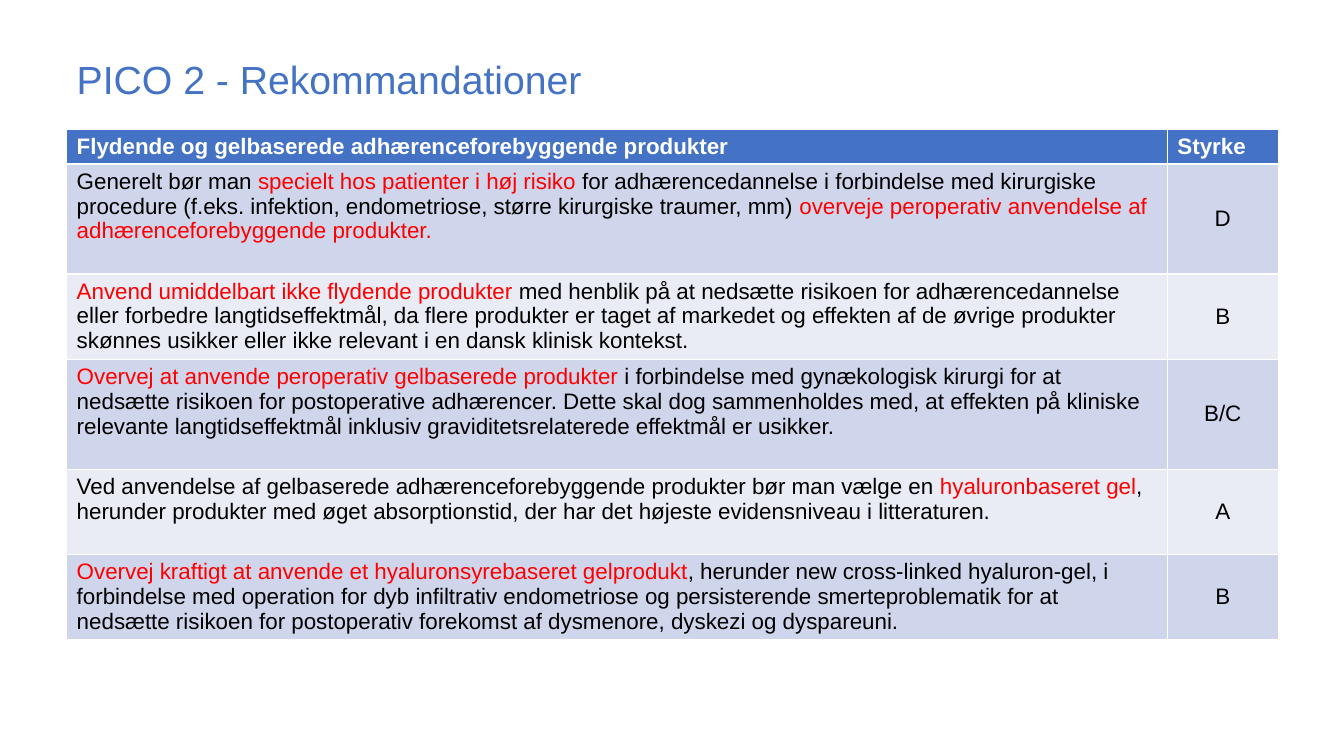
from pptx import Presentation
from pptx.dml.color import RGBColor as Rgb
from pptx.enum.text import MSO_ANCHOR as Anchor, MSO_AUTO_SIZE as Auto, PP_ALIGN as Align
from pptx.util import Cm, Pt

HUES = {"blue": "4472C4", "white": "FFFFFF", "black": "000000",
        "red": "FF0000", "dark": "CFD5EA", "light": "E9EBF5"}
FONT = "Arial"
HEAD = ("Flydende og gelbaserede adhærenceforebyggende produkter", "Styrke")
# Text between bars is shown in red.
ADVICE = [
    ("Generelt bør man |specielt hos patienter i høj risiko |for adhærencedannelse i "
     "forbindelse med kirurgiske procedure (f.eks. infektion, endometriose, større "
     "kirurgiske traumer, mm) |overveje peroperativ anvendelse af "
     "adhærenceforebyggende produkter.|", "D", 2.77),
    ("|Anvend umiddelbart ikke flydende produkter |med henblik på at nedsætte risikoen "
     "for adhærencedannelse eller forbedre langtidseffektmål, da flere produkter er "
     "taget af markedet og effekten af de øvrige produkter skønnes usikker eller ikke "
     "relevant i en dansk klinisk kontekst.", "B", 2.15),
    ("|Overvej at anvende peroperativ gelbaserede produkter |i forbindelse med "
     "gynækologisk kirurgi for at nedsætte risikoen for postoperative adhærencer. "
     "Dette skal dog sammenholdes med, at effekten på kliniske relevante "
     "langtidseffektmål inklusiv graviditetsrelaterede effektmål er usikker.",
     "B/C", 2.77),
    ("Ved anvendelse af gelbaserede adhærenceforebyggende produkter bør man vælge en "
     "|hyaluronbaseret gel|, herunder produkter med øget absorptionstid, der har det "
     "højeste evidensniveau i litteraturen.", "A", 2.15),
    ("|Overvej kraftigt at anvende et hyaluronsyrebaseret gelprodukt|, herunder new "
     "cross-linked hyaluron-gel, i forbindelse med operation for dyb infiltrativ "
     "endometriose og persisterende smerteproblematik for at nedsætte risikoen for "
     "postoperativ forekomst af dysmenore, dyskezi og dyspareuni.", "B", 2.15),
]


def hue(name):
    """Return the named colour."""
    return Rgb.from_string(HUES[name])


def style(run, size, color, bold=False):
    """Format one run."""
    font = run.font
    font.name, font.size, font.bold = FONT, Pt(size), bold
    font.color.rgb = hue(color)


def fill_cell(cell, text, back, color, bold=False):
    """Fill a cell, with the parts between bars in red."""
    cell.fill.solid()
    cell.fill.fore_color.rgb = hue(back)
    para = cell.text_frame.paragraphs[0]
    for i, part in enumerate(text.split("|")):
        if part:
            run = para.add_run()
            run.text = part
            style(run, 16, "red" if i % 2 else color, bold)


def add_title(slide, text, left, top, width, height):
    """Place and format the title."""
    title = slide.shapes.title
    title.left, title.top, title.width, title.height = left, top, width, height
    frame = title.text_frame
    frame.text = text
    frame.auto_size = Auto.NONE
    frame.vertical_anchor = Anchor.MIDDLE
    para = frame.paragraphs[0]
    para.alignment, para.line_spacing = Align.LEFT, 0.9
    style(para.runs[0], 28, "blue")


def add_advice(slide, left, top, width, height):
    """Draw the table of advice with its grades."""
    table = slide.shapes.add_table(len(ADVICE) + 1, 2, left, top, width, height).table
    grade = Cm(2.79)
    table.columns[0].width = width - grade
    table.columns[1].width = grade
    table.rows[0].height = height - sum(Cm(tall) for *_, tall in ADVICE)
    for col, text in enumerate(HEAD):
        fill_cell(table.cell(0, col), text, "blue", "white", True)
    for row, (text, mark, tall) in enumerate(ADVICE, 1):
        table.rows[row].height = Cm(tall)
        back = "dark" if row % 2 else "light"
        fill_cell(table.cell(row, 0), text, back, "black")
        cell = table.cell(row, 1)
        fill_cell(cell, mark, back, "black")
        cell.vertical_anchor = Anchor.MIDDLE
        cell.text_frame.paragraphs[0].alignment = Align.CENTER


def main():
    """Build and save the slide."""
    deck = Presentation()
    deck.slide_width, deck.slide_height = Cm(33.87), Cm(19.05)
    slide = deck.slides.add_slide(deck.slide_layouts[5])
    add_title(slide, "PICO 2 - Rekommandationer", Cm(1.68), Cm(0.23), Cm(29.21), Cm(3.68))
    add_advice(slide, Cm(1.68), Cm(3.25), Cm(30.53), Cm(12.87))
    deck.save("out.pptx")


if __name__ == "__main__":
    main()
